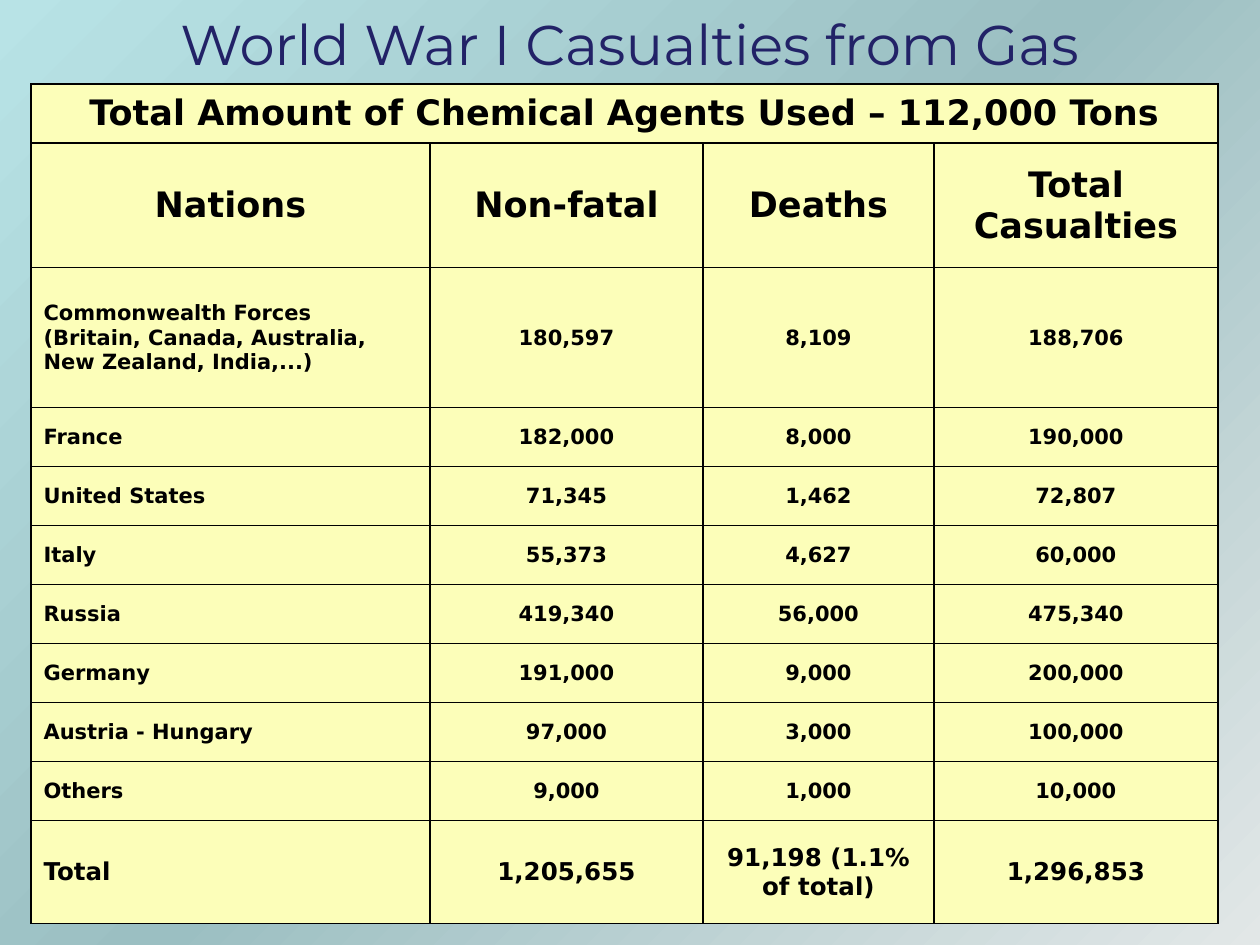
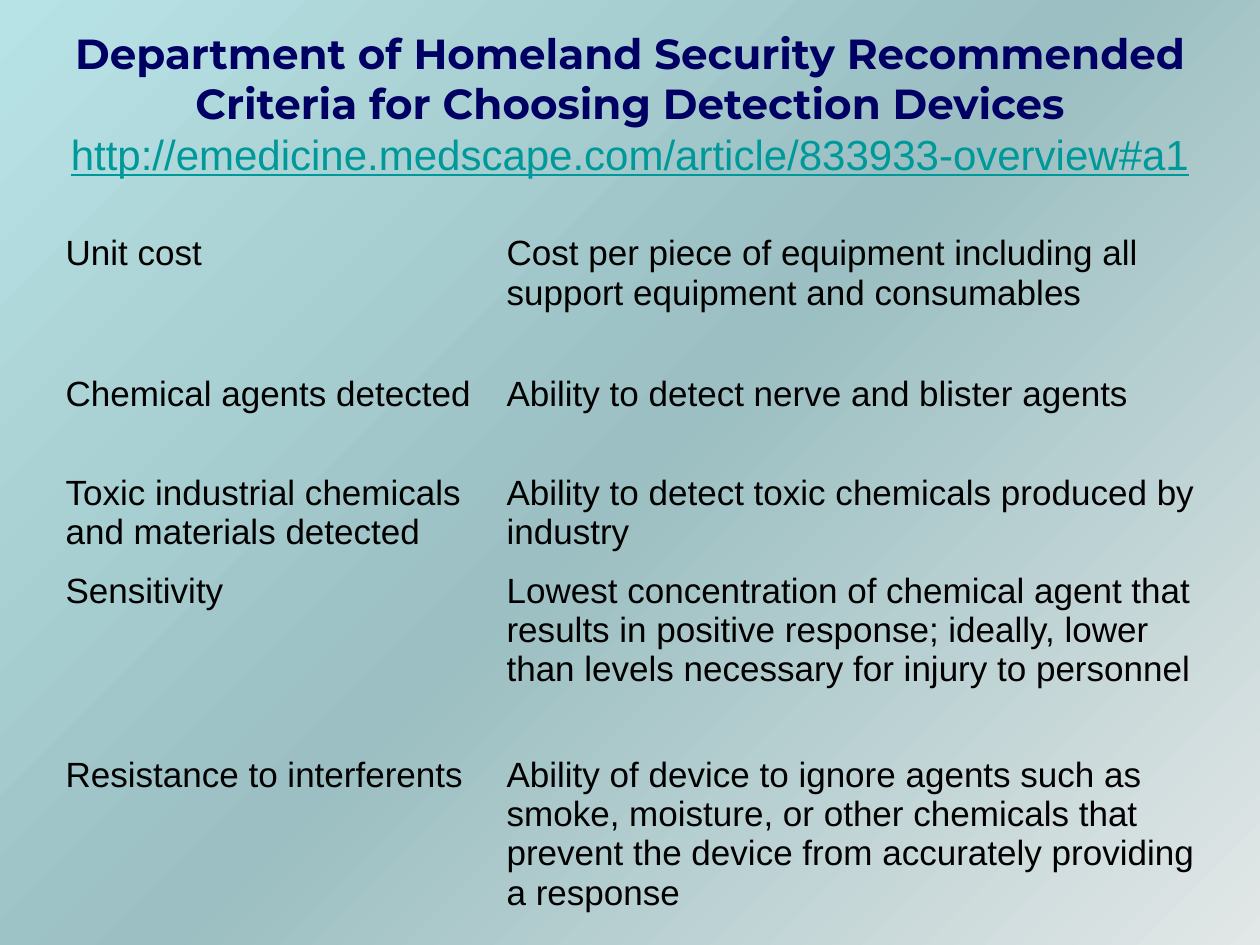
from copy import deepcopy

from lxml import etree
from pptx import Presentation
from pptx.dml.color import RGBColor
from pptx.enum.text import MSO_ANCHOR as Anchor, MSO_AUTO_SIZE as AutoSize, PP_ALIGN as Align
from pptx.oxml import parse_xml
from pptx.oxml.ns import nsdecls
from pptx.util import Emu, Pt

PX_PER_INCH = 126
NO_STYLE_NO_GRID = "{2D5ABB26-0587-4C30-8999-92F81FD0307C}"

SKY = RGBColor(0xB8, 0xE3, 0xE6)
TEAL = RGBColor(0x9B, 0xBF, 0xC2)
MIST = RGBColor(0xE2, 0xE7, 0xE7)
INDIGO = RGBColor(0x22, 0x22, 0x67)
NAVY = RGBColor(0x00, 0x00, 0x64)
LINK = RGBColor(0x00, 0x99, 0x99)
CREAM = RGBColor(0xFC, 0xFE, 0xB9)
BLACK = RGBColor(0x00, 0x00, 0x00)


def px(n):
    return Emu(round(n * 914400 / PX_PER_INCH))


def add_grid(slide, left, top, widths, heights, texts):
    """Add an unstyled table and fill in its texts."""
    frame = slide.shapes.add_table(len(heights), len(widths), px(left), px(top),
                                   px(sum(widths)), px(sum(heights)))
    grid = frame.table
    grid.first_row = grid.horz_banding = False
    frame.element.xpath(".//a:tableStyleId")[0].text = NO_STYLE_NO_GRID
    for column, width in zip(grid.columns, widths):
        column.width = px(width)
    for row, height, row_texts in zip(grid.rows, heights, texts):
        row.height = px(height)
        for cell, text in zip(row.cells, row_texts):
            cell.text_frame.text = text
    return grid


prs = Presentation()
prs.slide_width, prs.slide_height = px(1260), px(945)
title_only = prs.slide_layouts[5]

# Shared diagonal background
master = prs.slide_master
backdrop = master.background.fill
backdrop.gradient()
backdrop.gradient_angle = 315
stop_list = master.element.xpath(".//p:bg//a:gsLst")[0]
stop_list.append(deepcopy(stop_list[0]))
for stop, position, color in zip(backdrop.gradient_stops, (0, 0.5, 1), (SKY, TEAL, MIST)):
    stop.position = position
    stop.color.rgb = color

# Titles: left, top, width, height, anchor, then lines of text, font, size, colour, bold, underline
titles = [
    (29, 10, 1202, 67, Anchor.MIDDLE,
     [("World War I Casualties from Gas", "Montserrat", 32, INDIGO, False, False)]),
    (21, 21, 1218, 165, Anchor.TOP,
     [("Department of Homeland Security Recommended Criteria for Choosing Detection Devices",
       "Montserrat", 24, NAVY, True, False),
      ("http://emedicine.medscape.com/article/833933-overview#a1",
       "Arial", 24, LINK, False, True)]),
]
for left, top, width, height, anchor, lines in titles:
    title = prs.slides.add_slide(title_only).shapes.title
    title.left, title.top, title.width, title.height = map(px, (left, top, width, height))
    frame = title.text_frame
    frame.text = "\n".join(line[0] for line in lines)
    frame.word_wrap = True
    frame.auto_size = AutoSize.NONE
    frame.vertical_anchor = anchor
    for paragraph, (_, font_name, size, color, bold, underline) in zip(frame.paragraphs, lines):
        paragraph.alignment = Align.CENTER
        font = paragraph.font
        font.name, font.size, font.bold, font.underline = font_name, Pt(size), bold, underline
        font.color.rgb = color
casualties_slide, criteria_slide = prs.slides

# Casualties table
casualties = [
    ("Total Amount of Chemical Agents Used – 112,000 Tons",),
    ("Nations", "Non-fatal", "Deaths", "Total Casualties"),
    ("Commonwealth Forces\v(Britain, Canada, Australia, New Zealand, India,...)",
     "180,597", "8,109", "188,706"),
    ("France", "182,000", "8,000", "190,000"),
    ("United States", "71,345", "1,462", "72,807"),
    ("Italy", "55,373", "4,627", "60,000"),
    ("Russia", "419,340", "56,000", "475,340"),
    ("Germany", "191,000", "9,000", "200,000"),
    ("Austria - Hungary", "97,000", "3,000", "100,000"),
    ("Others", "9,000", "1,000", "10,000"),
    ("Total", "1,205,655", "91,198 (1.1% of total)", "1,296,853"),
]
casualty_grid = add_grid(casualties_slide, 31, 84, [399, 273, 231, 284],
                         [59, 125, 140] + [59] * 7 + [103], casualties)
casualty_grid.cell(0, 0).merge(casualty_grid.cell(0, 3))
sizes = [20, 20] + [12] * 8 + [14]
for row_index, (row, size) in enumerate(zip(casualty_grid.rows, sizes)):
    for column_index, cell in enumerate(row.cells):
        cell.fill.solid()
        cell.fill.fore_color.rgb = CREAM
        cell.vertical_anchor = Anchor.MIDDLE
        paragraph = cell.text_frame.paragraphs[0]
        is_nation = row_index > 1 and column_index == 0
        paragraph.alignment = Align.LEFT if is_nation else Align.CENTER
        font = paragraph.font
        font.name, font.size, font.bold = "DejaVu Sans", Pt(size), True
        font.color.rgb = BLACK
        # Thin border on all four sides, ahead of the fill
        properties = cell._tc.get_or_add_tcPr()
        for place, side in enumerate("LRTB"):
            border = parse_xml(f'<a:ln{side} {nsdecls("a")} w="{Pt(0.75)}"/>')
            solid = etree.SubElement(border, border.tag.split("}")[0] + "}solidFill")
            etree.SubElement(solid, border.tag.split("}")[0] + "}srgbClr", val=str(BLACK))
            properties.insert(place, border)

# Criteria table
criteria = [
    ("Unit cost",
     "Cost per piece of equipment including all support equipment and consumables"),
    ("Chemical agents detected", "Ability to detect nerve and blister agents"),
    ("Toxic industrial chemicals and materials detected",
     "Ability to detect toxic chemicals produced by industry"),
    ("Sensitivity",
     "Lowest concentration of chemical agent that results in positive response; "
     "ideally, lower than levels necessary for injury to personnel"),
    ("Resistance to interferents",
     "Ability of device to ignore agents such as smoke, moisture, or other chemicals "
     "that prevent the device from accurately providing a response"),
]
criteria_grid = add_grid(criteria_slide, 53, 228, [441, 730], [141, 99, 98, 184, 184], criteria)
for cell in criteria_grid.iter_cells():
    cell.fill.background()
    font = cell.text_frame.paragraphs[0].font
    font.name, font.size = "Arial", Pt(20)
    font.color.rgb = BLACK

prs.save("out.pptx")
